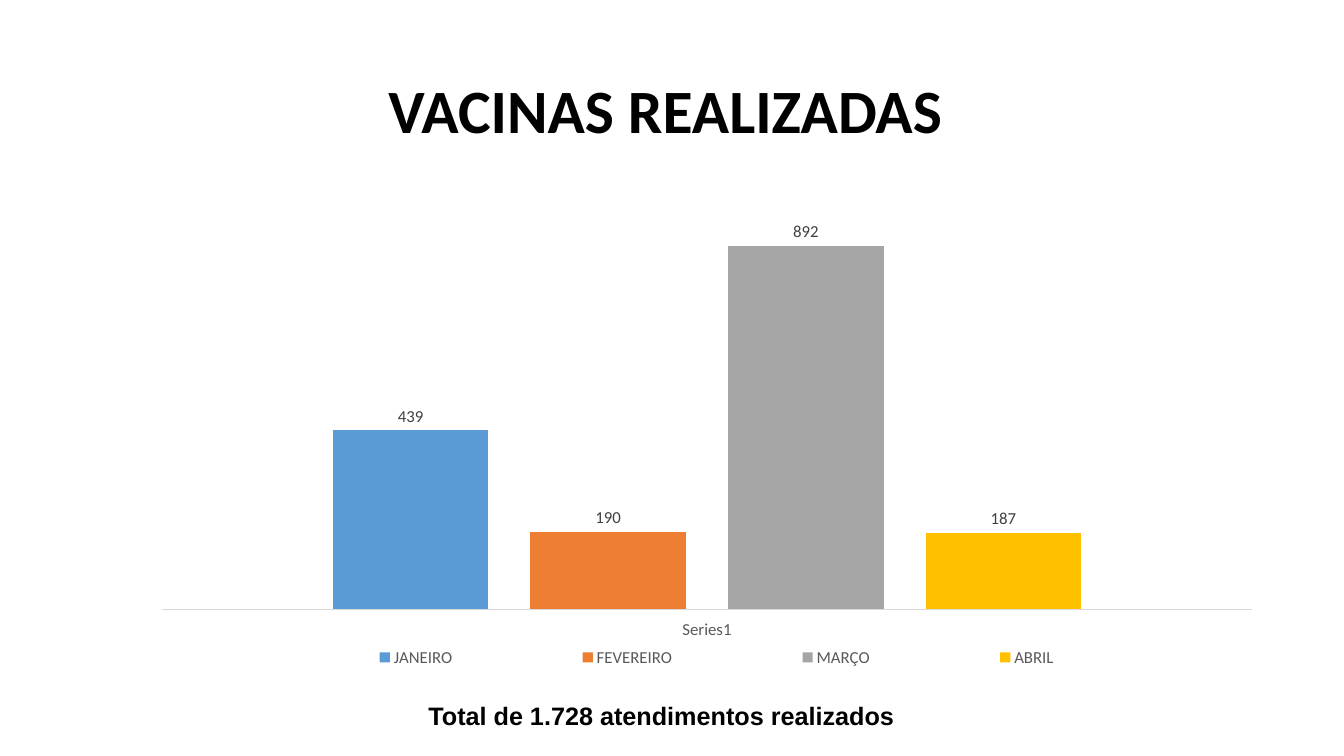
from lxml.etree import SubElement as Sub
from pptx import Presentation
from pptx.chart.data import CategoryChartData as Data
from pptx.dml.color import RGBColor as RGB
from pptx.enum.chart import XL_CHART_TYPE as Kind
from pptx.enum.chart import XL_LABEL_POSITION as Spot
from pptx.enum.chart import XL_LEGEND_POSITION as Side
from pptx.enum.chart import XL_TICK_LABEL_POSITION as Tick
from pptx.enum.chart import XL_TICK_MARK as Mark
from pptx.enum.text import MSO_ANCHOR as Anchor
from pptx.enum.text import PP_ALIGN as Align
from pptx.oxml.ns import qn
from pptx.util import Inches, Pt

MONTHS = [
    ("JANEIRO", 439, "5B9BD5"),
    ("FEVEREIRO", 190, "ED7D31"),
    ("MARÇO", 892, "A5A5A5"),
    ("ABRIL ", 187, "FFC000"),
]


def paint(fill, color):
    fill.solid()
    fill.fore_color.rgb = RGB.from_string(color)


def style(font, size, color, bold=False, name="Calibri"):
    font.name, font.size, font.bold = name, Pt(size), bold
    paint(font.fill, color)


def add_text(slide, text, box, size, name, anchor=Anchor.TOP, lead=1.0):
    frame = slide.shapes.add_textbox(*map(Inches, box)).text_frame
    frame.word_wrap = True
    frame.vertical_anchor = anchor
    par = frame.paragraphs[0]
    par.text = text
    par.alignment = Align.CENTER
    par.line_spacing = lead
    style(par.font, size, "000000", True, name)


def place(node, index, box, inner=False):
    """Give a chart part a fixed place, in fractions of the chart."""
    for old in node.findall(qn("c:layout")):
        node.remove(old)
    layout = node.makeelement(qn("c:layout"))
    node.insert(index, layout)
    manual = Sub(layout, qn("c:manualLayout"))
    if inner:
        Sub(manual, qn("c:layoutTarget")).set("val", "inner")
    for key in ("xMode", "yMode"):
        Sub(manual, qn(f"c:{key}")).set("val", "edge")
    for key, val in zip("xywh", box):
        Sub(manual, qn(f"c:{key}")).set("val", str(val))


def style_axes(chart):
    axis = chart.category_axis
    axis.major_tick_mark = axis.minor_tick_mark = Mark.NONE
    axis.tick_label_position = Tick.LOW
    axis.format.line.width = Pt(0.75)
    paint(axis.format.line.fill, "D9D9D9")
    style(axis.tick_labels.font, 12, "595959")
    scale = chart.value_axis
    scale.minimum_scale, scale.maximum_scale = 0, 1000
    scale.has_major_gridlines = False
    scale.visible = False


def style_bars(plot):
    plot.gap_width, plot.overlap = 219, -27
    plot.vary_by_categories = False
    for bar, (_, _, color) in zip(plot.series, MONTHS):
        paint(bar.format.fill, color)
        labels = bar.data_labels
        labels.show_value = True
        labels.position = Spot.OUTSIDE_END
        style(labels.font, 12, "404040")


def add_legend(chart):
    chart.has_legend = True
    legend = chart.legend
    legend.position = Side.BOTTOM
    legend.include_in_layout = False
    style(legend.font, 12, "595959")
    place(legend._element, 1, (0.14, 0.91, 0.8, 0.08))


def add_bars(slide, box):
    data = Data()
    data.categories = ["Series1"]
    for month, count, _ in MONTHS:
        data.add_series(month, [count])
    frame = slide.shapes.add_chart(
        Kind.COLUMN_CLUSTERED, *map(Inches, box), data)
    chart = frame.chart
    chart.has_title = False
    style(chart.font, 10, "000000")
    style_axes(chart)
    style_bars(chart.plots[0])
    add_legend(chart)
    area = chart._chartSpace.chart.plotArea
    place(area, 0, (0.06, 0, 0.94, 0.85), inner=True)


def main():
    deck = Presentation()
    deck.slide_width, deck.slide_height = Inches(13.33), Inches(7.5)
    slide = deck.slides.add_slide(deck.slide_layouts[6])
    add_text(slide, "VACINAS REALIZADAS ", (0.92, 0.4, 11.5, 1.45),
             44, "Calibri", Anchor.MIDDLE, 0.9)
    add_bars(slide, (0.92, 2, 11.5, 4.76))
    add_text(slide, "Total de 1.728 atendimentos realizados",
             (1.66, 6.9, 9.8, 0.4), 18, "Arial")
    deck.save("out.pptx")


if __name__ == "__main__":
    main()
